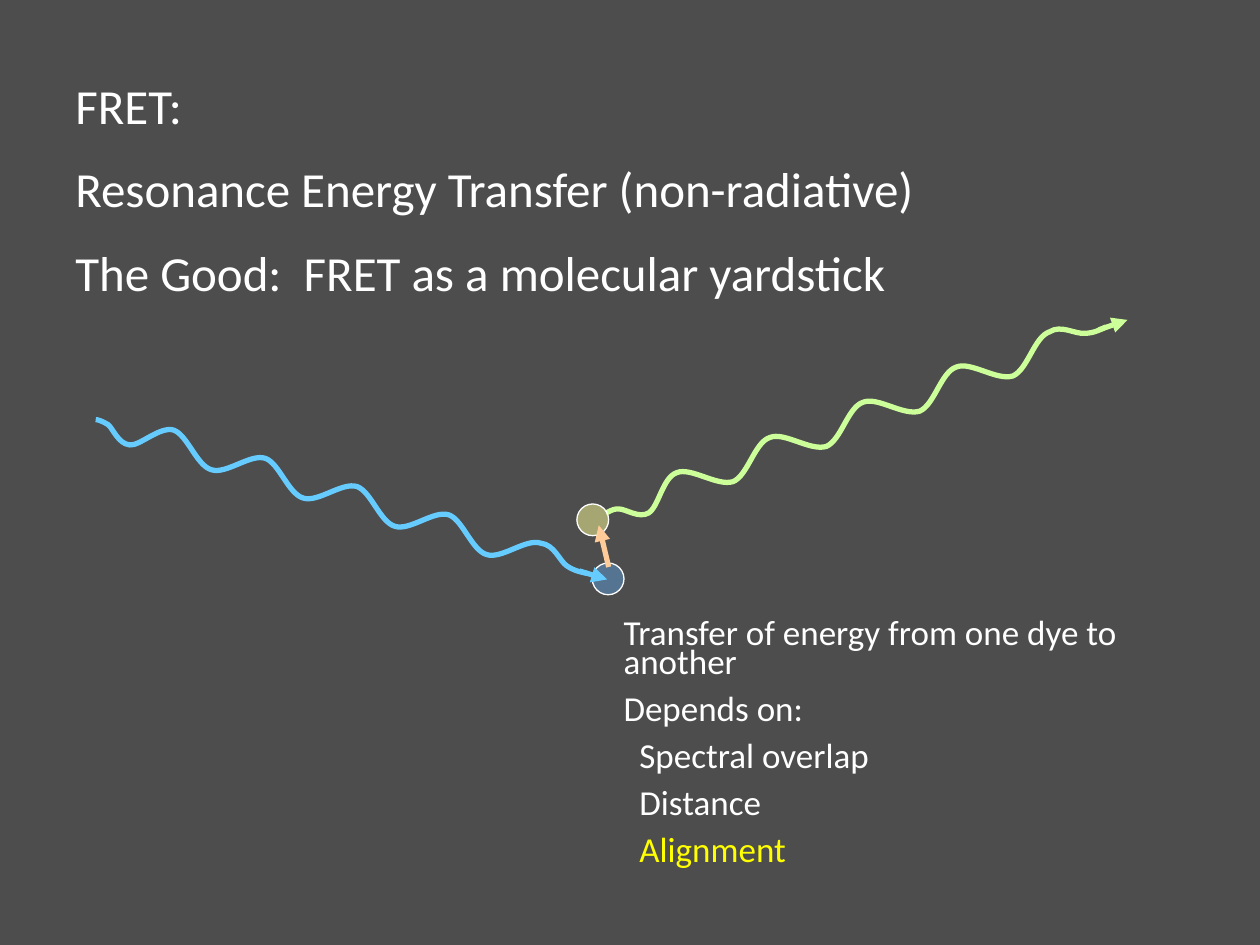
from lxml import etree
from pptx import Presentation
from pptx.dml.color import RGBColor
from pptx.enum import shapes, text
from pptx.oxml.ns import qn
from pptx.util import Cm, Pt

BACKGROUND = RGBColor(0x4D, 0x4D, 0x4D)
WHITE = RGBColor(0xFF, 0xFF, 0xFF)
YELLOW = RGBColor(0xFF, 0xFF, 0x00)
DONOR_BLUE = RGBColor(0x5B, 0x9B, 0xD5)
ACCEPTOR_YELLOW = RGBColor(0xFF, 0xFF, 0x99)
EXCITATION_BLUE = RGBColor(0x66, 0xCC, 0xFF)
EMISSION_GREEN = RGBColor(0xCC, 0xFF, 0x99)
TRANSFER_ORANGE = RGBColor(0xFF, 0xCC, 0x99)

# Each curve is two control points and an end point, in cm from its start.
EXCITATION = {
    "lead_in": [
        [(0.05, 0), (0.13, 0.03), (0.25, 0.10)],
        [(0.10, 0.08), (0.20, 0.38), (0.43, 0.41)],
        [(0.20, 0.03), (0.61, -0.38), (0.89, -0.30)],
    ],
    "cycle": [
        [(0.28, 0.10), (0.46, 0.71), (0.76, 0.80)],
        [(0.30, 0.10), (0.79, -0.33), (1.09, -0.23)],
    ],
    "lead_out": [
        [(0.28, 0.03), (0.38, 0.36), (0.53, 0.46)],
        [(0.15, 0.10), (0.30, 0.13), (0.41, 0.15)],
    ],
    "arrow": [(9.75, 3.05), (10.31, 3.22)],
}
EMISSION = {
    "lead_in": [
        [(0.03, 0), (0.10, -0.08), (0.25, -0.08)],
        [(0.15, 0), (0.41, 0.20), (0.61, 0.08)],
        [(0.20, -0.13), (0.28, -0.71), (0.56, -0.81)],
    ],
    "cycle": [
        [(0.29, -0.12), (0.81, 0.28), (1.14, 0.18)],
        [(0.30, -0.13), (0.43, -0.79), (0.74, -0.89)],
    ],
    "lead_out": [
        [(0.23, -0.15), (0.51, 0.05), (0.71, 0.03)],
        [(0.20, 0), (0.36, -0.10), (0.43, -0.13)],
    ],
    "arrow": [(9.93, -3.69), (10.51, -3.89)],
}
WAVE_CYCLES = 4


def add_text_block(slide, left, top, width, height, lines, size, spacing=None):
    """Add lines given as (wording, colour, left margin in cm)."""
    block = slide.shapes.add_textbox(Cm(left), Cm(top), Cm(width), Cm(height))
    frame = block.text_frame
    frame.word_wrap = True
    frame.auto_size = text.MSO_AUTO_SIZE.SHAPE_TO_FIT_TEXT
    frame.vertical_anchor = text.MSO_ANCHOR.MIDDLE
    for number, (wording, colour, margin) in enumerate(lines):
        paragraph = frame.add_paragraph() if number else frame.paragraphs[0]
        paragraph.space_before = Pt(size / 2)
        if spacing:
            paragraph.line_spacing = spacing
        if margin:
            paragraph._p.get_or_add_pPr().set("marL", str(Cm(margin)))
        run = paragraph.add_run()
        run.text = wording
        run.font.name = "Calibri"
        run.font.size = Pt(size)
        run.font.color.rgb = colour


def add_dye(slide, left, top, diameter, colour):
    dye = slide.shapes.add_shape(
        shapes.MSO_SHAPE.OVAL, Cm(left), Cm(top), Cm(diameter), Cm(diameter))
    dye.shadow.inherit = False
    dye.fill.solid()
    dye.fill.fore_color.rgb = colour
    tint = dye._element.spPr.find(qn("a:solidFill"))[0]
    etree.SubElement(tint, qn("a:alpha"), val="50000")
    dye.line.color.rgb = WHITE
    dye.line.width = Pt(0.75)


def add_arrow(slide, start, end, colour):
    arrow = slide.shapes.add_connector(
        shapes.MSO_CONNECTOR.STRAIGHT,
        *(Cm(value) for value in (*start, *end)))
    arrow.line.color.rgb = colour
    arrow.line.width = Pt(3)
    etree.SubElement(arrow.line._get_or_add_ln(), qn("a:tailEnd"), type="triangle")
    etree.SubElement(arrow._element.spPr, qn("a:effectLst"))


def bend_segments(outline):
    """Turn every three straight segments into one cubic curve."""
    track = outline._element.spPr.find(".//" + qn("a:path"))
    segments = track.findall(qn("a:lnTo"))
    for first in range(0, len(segments), 3):
        curve = etree.SubElement(track, qn("a:cubicBezTo"))
        for segment in segments[first:first + 3]:
            curve.append(segment[0])
            track.remove(segment)


def add_light_wave(slide, left, top, wave, colour):
    """Draw a wave and its arrowhead from the starting point (left, top)."""
    x, y = left, top
    points = []
    for curve in wave["lead_in"] + wave["cycle"] * WAVE_CYCLES + wave["lead_out"]:
        points += [(Cm(x + dx), Cm(y + dy)) for dx, dy in curve]
        x, y = x + curve[-1][0], y + curve[-1][1]
    builder = slide.shapes.build_freeform(Cm(left), Cm(top))
    builder.add_line_segments(points, close=False)
    outline = builder.convert_to_shape()
    bend_segments(outline)
    outline.shadow.inherit = False
    outline.fill.background()
    outline.line.color.rgb = colour
    outline.line.width = Pt(3)
    add_arrow(slide, *[(left + dx, top + dy) for dx, dy in wave["arrow"]], colour)


def add_energy_transfer(slide, left, top):
    """Draw both dyes, both light waves and the transfer between the dyes."""
    add_dye(slide, left + 10.01, top + 2.89, 0.64, DONOR_BLUE)
    add_light_wave(slide, left, top, EXCITATION, EXCITATION_BLUE)
    add_light_wave(slide, left + 10.29, top + 1.88, EMISSION, EMISSION_GREEN)
    add_dye(slide, left + 9.7, top + 1.7, 0.64, ACCEPTOR_YELLOW)
    add_arrow(slide, (left + 10.34, top + 2.97), (left + 10.14, top + 2.13),
              TRANSFER_ORANGE)


def main():
    deck = Presentation()
    deck.slide_width, deck.slide_height = Cm(25.4), Cm(19.05)
    slide = deck.slides.add_slide(deck.slide_layouts[6])
    slide.background.fill.solid()
    slide.background.fill.fore_color.rgb = BACKGROUND

    add_text_block(slide, 1.27, 1.27, 20.96, 5.05, [
        ("FRET:", WHITE, 0),
        ("Resonance Energy Transfer (non-radiative)", WHITE, 0),
        ("The Good:  FRET as a molecular yardstick", WHITE, 0),
    ], size=28)
    add_energy_transfer(slide, 1.93, 8.46)
    add_text_block(slide, 12.32, 12.24, 12.04, 5.56, [
        ("Transfer of energy from one dye to another", WHITE, 0),
        ("Depends on:", WHITE, 0),
        ("Spectral overlap", WHITE, 0.32),
        ("Distance", WHITE, 0.32),
        ("Alignment", YELLOW, 0.32),
    ], size=20, spacing=0.7)
    deck.save("out.pptx")


if __name__ == "__main__":
    main()
